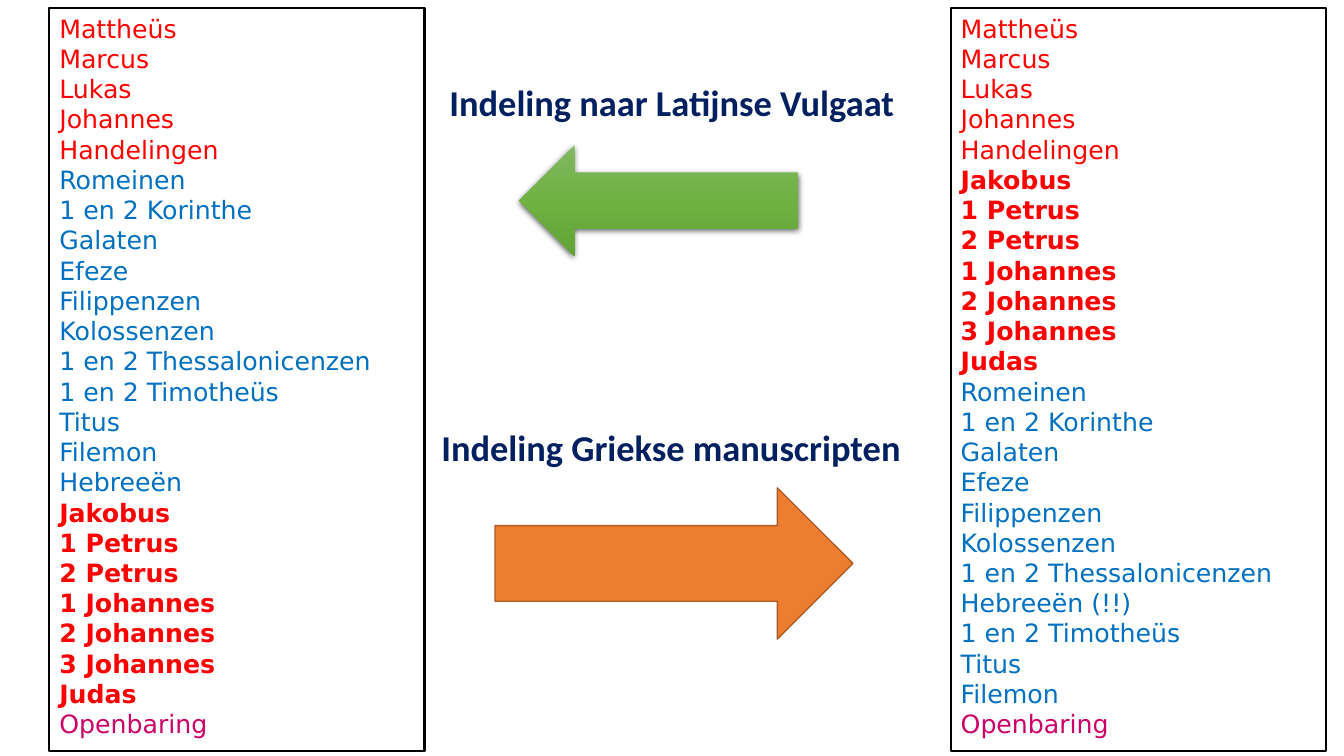
from copy import deepcopy

from lxml import etree
from pptx import Presentation
from pptx import util as u
from pptx.dml.color import RGBColor
from pptx.enum import shapes, text
from pptx.oxml import ns

PX = 9144  # 100 px to the inch
RED, BLUE, PURPLE, NAVY = "FF0000", "0070C0", "CC0066", "002060"

GOSPELS = ["Mattheüs", "Marcus", "Lukas", "Johannes", "Handelingen"]
GENERAL = ["Jakobus", "1 Petrus", "2 Petrus", "1 Johannes", "2 Johannes",
           "3 Johannes", "Judas"]
CHURCHES = ["Romeinen", "1 en 2 Korinthe", "Galaten", "Efeze", "Filippenzen",
            "Kolossenzen", "1 en 2 Thessalonicenzen"]
PERSONS = ["1 en 2 Timotheüs", "Titus", "Filemon"]

gospels = (GOSPELS, RED, False)
general = (GENERAL, RED, True)
revelation = (["Openbaring"], PURPLE, False)
VULGATE = [gospels, (CHURCHES + PERSONS + ["Hebreeën"], BLUE, False),
           general, revelation]
GREEK = [gospels, general,
         (CHURCHES + ["Hebreeën (!!)"] + PERSONS, BLUE, False), revelation]


def color(value):
    return RGBColor.from_string(value)


def emu(*lengths):
    return [u.Emu(n * PX) for n in lengths]


def style(p, name, size, value, bold):
    font = p.runs[0].font
    font.name, font.size, font.bold = name, u.Pt(size), bold
    font.color.rgb = color(value)


def add_shape(s, kind, box):
    sp = s.shapes.add_shape(kind, *emu(*box))
    sp.shadow.inherit = False
    return sp


def book_list(s, box, groups):
    """Place a framed list; each group is (books, colour, bold)."""
    sp = add_shape(s, shapes.MSO_SHAPE.RECTANGLE, box)
    sp.fill.background()
    sp.line.color.rgb = color("000000")
    sp.line.width = u.Pt(1.5)
    tf = sp.text_frame
    tf.word_wrap = True
    tf.vertical_anchor = text.MSO_ANCHOR.TOP
    books = [(book, value, bold) for names, value, bold in groups for book in names]
    tf.text = "\n".join(book for book, _, _ in books)
    for p, (_, value, bold) in zip(tf.paragraphs, books):
        p.alignment = text.PP_ALIGN.LEFT
        p.line_spacing = u.Pt(21.6)
        style(p, "DejaVu Sans", 18, value, bold)


def heading(s, box, words):
    tf = s.shapes.add_textbox(*emu(*box)).text_frame
    tf.word_wrap = True
    tf.text = words
    style(tf.paragraphs[0], "Calibri", 26, NAVY, True)


def vulgate_arrow(s, box):
    sp = add_shape(s, shapes.MSO_SHAPE.LEFT_ARROW, box)
    sp.line.fill.background()
    sp.fill.gradient()
    sp.fill.gradient_angle = 270
    stops = sp.element.spPr.find(".//" + ns.qn("a:gsLst"))
    stops.append(deepcopy(stops[-1]))
    shades = ["81B861", "6FB242", "62A336"]
    for stop, position, shade in zip(sp.fill.gradient_stops, (0, 0.5, 1), shades):
        stop.position = position
        stop.color.rgb = color(shade)
    effects = sp.element.spPr.find(ns.qn("a:effectLst"))
    shadow = etree.SubElement(effects, ns.qn("a:outerShdw"), blurRad=str(u.Pt(4.5)),
                              dist=str(u.Pt(1.5)), dir="5400000", rotWithShape="0")
    black = etree.SubElement(shadow, ns.qn("a:srgbClr"), val="000000")
    etree.SubElement(black, ns.qn("a:alpha"), val="63000")


def greek_arrow(s, box):
    sp = add_shape(s, shapes.MSO_SHAPE.RIGHT_ARROW, box)
    sp.fill.solid()
    sp.fill.fore_color.rgb = color("ED7D31")
    sp.line.color.rgb = color("AF5C24")
    sp.line.width = u.Pt(1)


def main():
    prs = Presentation()
    prs.slide_width, prs.slide_height = emu(1333, 750)
    s = prs.slides.add_slide(prs.slide_layouts[6])
    book_list(s, (49, 8, 372, 737), VULGATE)
    heading(s, (436, 75, 507, 54), "Indeling naar Latijnse Vulgaat")
    vulgate_arrow(s, (515, 144, 277, 110))
    book_list(s, (943, 8, 372, 737), GREEK)
    heading(s, (428, 417, 507, 54), "Indeling Griekse manuscripten")
    greek_arrow(s, (491, 484, 355, 150))
    prs.save("out.pptx")


if __name__ == "__main__":
    main()
